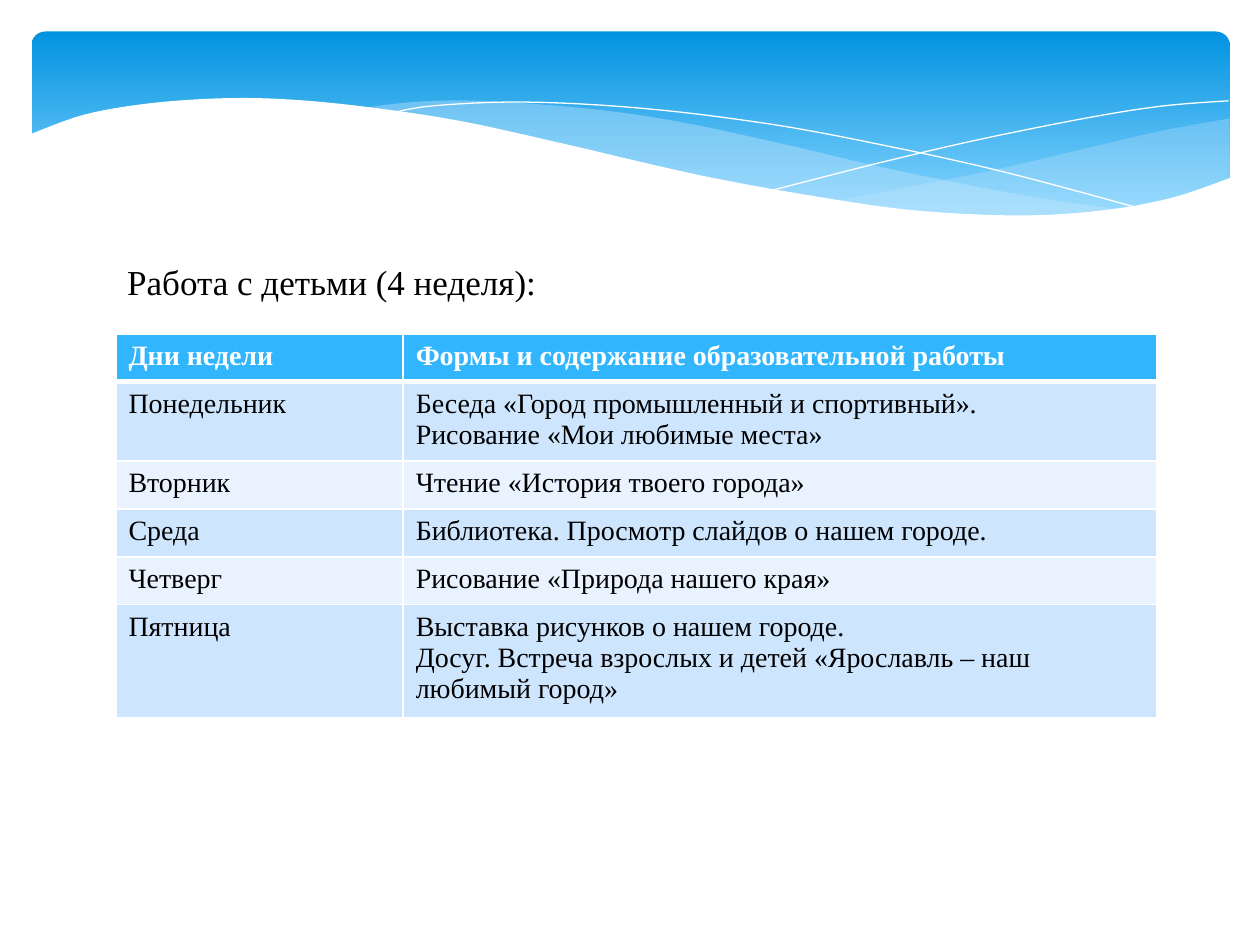
from lxml.etree import SubElement
from pptx import Presentation
from pptx.dml.color import RGBColor
from pptx.enum.shapes import MSO_SHAPE
from pptx.oxml.ns import qn
from pptx.util import Inches, Pt

WHITE = RGBColor(0xFF, 0xFF, 0xFF)
BLACK = RGBColor(0, 0, 0)
DEEP = RGBColor(0x02, 0x93, 0xE0)
SKY = RGBColor(0x83, 0xD3, 0xFE)
MIST = RGBColor(0xC6, 0xE7, 0xFC)
HEAD = RGBColor(0x31, 0xB6, 0xFD)
BANDS = [RGBColor(0xE8, 0xF3, 0xFF), RGBColor(0xCE, 0xE5, 0xFE)]
FONT = "Times New Roman"


def smooth(knots, steps=6):
    """Points of a Catmull-Rom curve through the knots."""
    ends = [knots[0], *knots, knots[-1]]
    points = [knots[0]]
    for a, b, c, d in zip(ends, ends[1:], ends[2:], ends[3:]):
        for t in (n / steps for n in range(1, steps + 1)):
            points.append(tuple(
                (2 * q + (r - p) * t + (2 * p - 5 * q + 4 * r - s) * t**2
                 + (3 * q - p - 3 * r + s) * t**3) / 2
                for p, q, r, s in zip(a, b, c, d)))
    return points


def outline(points, close):
    """Freeform through points given in inches."""
    spots = [(Inches(x), Inches(y)) for x, y in points]
    pen = slide.shapes.build_freeform(*spots[0])
    pen.add_line_segments(spots[1:], close=close)
    shape = pen.convert_to_shape()
    shape.shadow.inherit = False
    return shape


deck = Presentation()
deck.slide_width, deck.slide_height = Inches(10), Inches(7.5)
slide = deck.slides.add_slide(deck.slide_layouts[6])

# Gradient banner
banner = slide.shapes.add_shape(
    MSO_SHAPE.ROUNDED_RECTANGLE, Inches(0.25), Inches(0.25), Inches(9.51), Inches(1.56))
banner.adjustments[0] = 0.071
banner.shadow.inherit = False
banner.line.fill.background()
banner.fill.gradient()
banner.fill.gradient_angle = 270
for stop, color, place in zip(banner.fill.gradient_stops, (DEEP, SKY), (0, 0.9)):
    stop.color.rgb = color
    stop.position = place

# Translucent waves, each an upper and a lower edge
right = (smooth([(9.76, 0.94), (9.21, 1.04), (8.61, 1.18), (7.79, 1.37), (6.61, 1.6)])
         + smooth([(6.61, 1.6), (7.19, 1.67), (8.03, 1.72), (8.81, 1.67), (9.35, 1.56),
                   (9.76, 1.41)]))
middle = (smooth([(8.93, 1.67), (8.07, 1.54), (7.06, 1.34), (6.29, 1.16), (5.41, 0.97),
                  (4.65, 0.86), (3.8, 0.8), (3.28, 0.81), (2.86, 0.86)])
          + smooth([(2.86, 0.86), (3.62, 0.97), (4.49, 1.16), (5.66, 1.43), (6.5, 1.58),
                    (7.36, 1.69), (8.18, 1.73), (8.93, 1.67)]))
for points, alpha in ((right, 29), (middle, 40)):
    wave = outline(points, True)
    wave.line.fill.background()
    wave.fill.solid()
    wave.fill.fore_color.rgb = MIST
    tint = wave.fill._xPr.find(qn("a:solidFill"))[0]
    SubElement(tint, qn("a:alpha"), val=str(alpha * 1000))

# Thin white curves
for knots in (
    [(3.09, 0.9), (3.44, 0.84), (4.16, 0.81), (5.1, 0.86), (6.08, 0.98), (6.95, 1.14),
     (7.95, 1.36), (9.07, 1.66)],
    [(6.13, 1.51), (6.95, 1.3), (7.76, 1.11), (8.66, 0.93), (9.24, 0.84), (9.75, 0.8)],
):
    curve = outline(smooth(knots), False)
    curve.fill.background()
    curve.line.color.rgb = WHITE
    curve.line.width = Pt(0)

# White wave that cuts the banner's lower edge
edge = smooth([(9.77, 1.41), (9.3, 1.57), (8.75, 1.67), (8.09, 1.71), (7.26, 1.67),
               (6.48, 1.56), (5.55, 1.39), (4.47, 1.14), (3.65, 0.96), (2.92, 0.85),
               (2.3, 0.79), (1.77, 0.78), (1.19, 0.82), (0.67, 0.91), (0.23, 1.07)])
cut = outline(edge + [(0.23, 2.24), (9.77, 2.24)], True)
cut.line.fill.background()
cut.fill.solid()
cut.fill.fore_color.rgb = WHITE

# Timetable
rows = [
    ("Дни недели", "Формы и содержание образовательной работы"),
    ("Понедельник", "Беседа «Город промышленный и спортивный».\nРисование «Мои любимые места»"),
    ("Вторник", "Чтение «История твоего города»"),
    ("Среда", "Библиотека. Просмотр слайдов о нашем городе."),
    ("Четверг", "Рисование «Природа нашего края»"),
    ("Пятница", "Выставка рисунков о нашем городе.\n"
                "Досуг. Встреча взрослых и детей «Ярославль – наш любимый город»"),
]
tall = [0.38, 0.63, 0.38, 0.38, 0.38, 0.9]
table = slide.shapes.add_table(
    len(rows), 2, Inches(0.92), Inches(2.65), Inches(8.26), Inches(sum(tall))).table
for col, wide in zip(table.columns, (2.28, 5.98)):
    col.width = Inches(wide)
for i, texts in enumerate(rows):
    table.rows[i].height = Inches(tall[i])
    style = {"size": Pt(16), "name": FONT, "bold": i == 0}
    for j, text in enumerate(texts):
        cell = table.cell(i, j)
        props = cell._tc.get_or_add_tcPr()
        for side in "LRTB":
            thick = (side, i) in (("B", 0), ("T", 1))
            line = SubElement(props, qn("a:ln" + side), w=str(Pt(3 if thick else 1)))
            paint = SubElement(line, qn("a:solidFill"))
            SubElement(paint, qn("a:srgbClr"), val=str(WHITE))
        cell.fill.solid()
        cell.fill.fore_color.rgb = BANDS[i % 2] if i else HEAD
        cell.text = text
        for para in cell.text_frame.paragraphs:
            font = para.runs[0].font
            for key, value in style.items():
                setattr(font, key, value)
            font.color.rgb = BLACK if i else WHITE

# Heading above the table
box = slide.shapes.add_textbox(Inches(0.84), Inches(2.02), Inches(6.3), Inches(0.44))
frame = box.text_frame
frame.word_wrap = True
frame.margin_left = Inches(0.17)
frame.text = "Работа с детьми (4 неделя):"
font = frame.paragraphs[0].runs[0].font
for key, value in {"size": Pt(20), "name": FONT}.items():
    setattr(font, key, value)
font.color.rgb = BLACK

deck.save("out.pptx")
